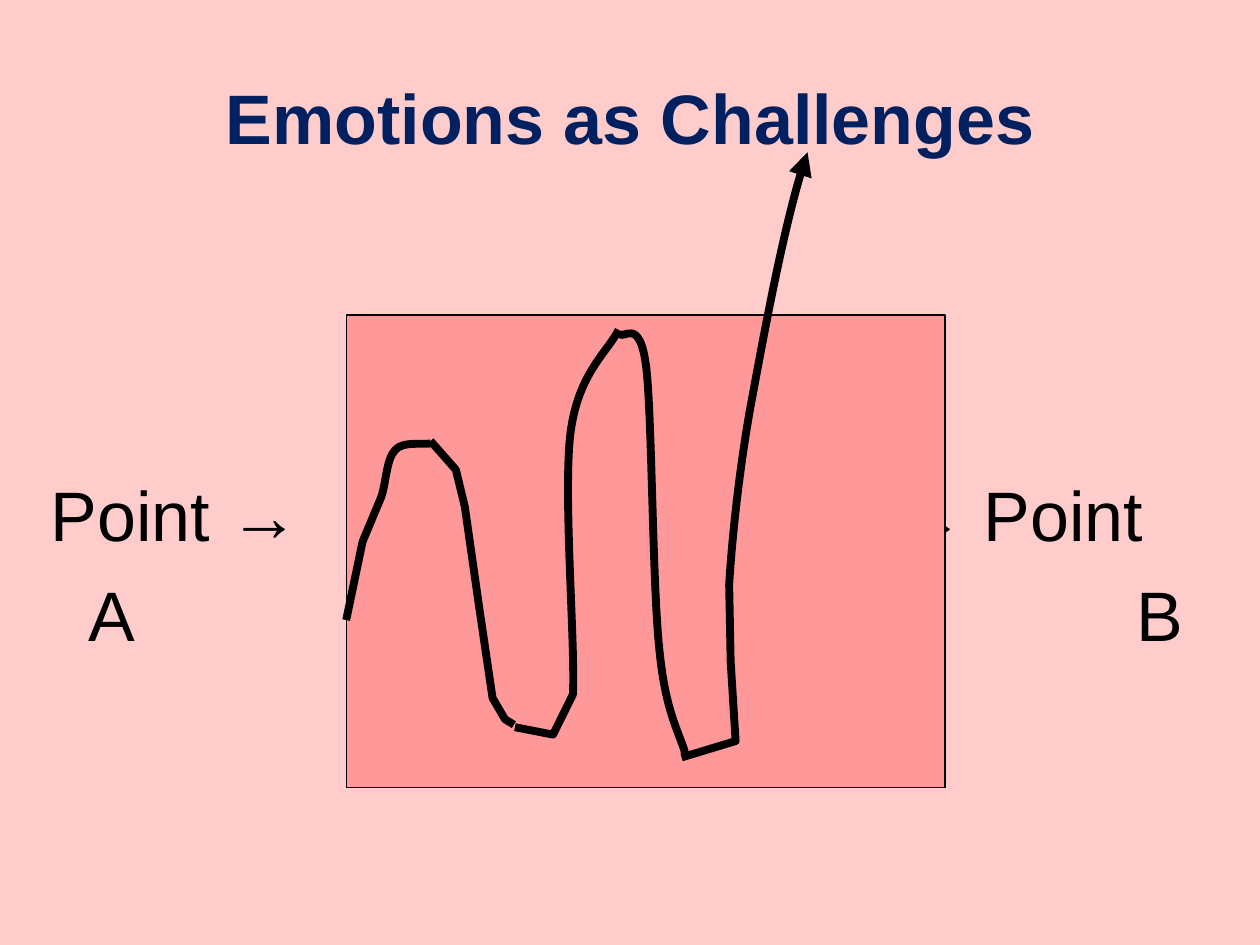
from lxml import etree
from pptx import Presentation
from pptx.dml.color import RGBColor
from pptx.enum.shapes import MSO_SHAPE
from pptx.enum.text import MSO_ANCHOR, PP_ALIGN
from pptx.oxml.ns import qn
from pptx.util import Cm, Pt

RECTANGLE = MSO_SHAPE.RECTANGLE
TOP, MIDDLE = MSO_ANCHOR.TOP, MSO_ANCHOR.MIDDLE
LEFT, CENTER = PP_ALIGN.LEFT, PP_ALIGN.CENTER
TITLE_ONLY = 5
COLORS = {"page": "FFCCCC", "panel": "FF9999", "title": "002060", "ink": "000000"}

# Each stroke is a start point, then segments: one point for a line, three for a curve.
STROKES = [
    [(0, 6.15), [(0.33, 4.57)], [(0.71, 3.66)],
     [(0.81, 3.35), (0.81, 2.9), (0.99, 2.72)],
     [(1.14, 2.54), (1.55, 2.62), (1.7, 2.59)]],
    [(1.7, 2.54), [(2.21, 3.12)], [(2.39, 3.86)], [(2.67, 5.82)],
     [(2.95, 7.72)], [(3.2, 8.15)], [(3.38, 8.26)]],
    [(3.4, 8.31), [(4.17, 8.46)], [(4.57, 7.65)],
     [(4.62, 6.63), (4.37, 3.61), (4.52, 2.39)],
     [(4.67, 1.17), (5.28, 0.74), (5.49, 0.3)]],
    [(5.51, 0.38), [(5.59, 0.51), (5.92, 0), (6.05, 1.07)],
     [(6.17, 2.13), (6.17, 5.49), (6.32, 6.81)],
     [(6.45, 8.1), (6.76, 8.48), (6.86, 8.94)]],
    [(6.76, 8.92), [(7.85, 8.59)], [(7.75, 6.98)], [(7.72, 5.44)],
     [(7.77, 4.6), (7.9, 3.3), (8.13, 1.96)],
     [(8.38, 0.61), (8.85, -2), (9.3, -3.28)]],
]


def color(name):
    """Return the named colour."""
    return RGBColor.from_string(COLORS[name])


def place(shape, box):
    """Move a shape to a box given in centimetres."""
    shape.left, shape.top, shape.width, shape.height = map(Cm, box)


def write(para, text, size=40, ink="ink", bold=False, align=LEFT, before=0, indent=0):
    """Fill a paragraph with formatted text."""
    props = para._p.get_or_add_pPr()
    props.set("marL", str(Cm(indent)))
    props.set("indent", "0")
    para.alignment = align
    para.space_before = Pt(before)
    span = para.add_run()
    span.text = text
    span.font.name = "Arial"
    span.font.size = Pt(size)
    span.font.bold = bold
    span.font.color.rgb = color(ink)


def add_title(page, box, text):
    """Place and format the title placeholder."""
    title = page.shapes.title
    place(title, box)
    title.text_frame.vertical_anchor = MIDDLE
    write(title.text_frame.paragraphs[0], text, ink="title", bold=True, align=CENTER)


def add_point(page, box, word, letter, indent):
    """Add a two-line point label with an indented letter."""
    frame = page.shapes.add_textbox(*map(Cm, box)).text_frame
    frame.word_wrap = True
    frame.vertical_anchor = TOP
    frame.margin_left = frame.margin_right = frame.margin_top = frame.margin_bottom = 0
    write(frame.paragraphs[0], word)
    write(frame.add_paragraph(), letter, before=9.4, indent=indent)


def add_stroke(page, origin, start, segments):
    """Draw an open thick stroke of lines and curves from an origin."""
    def locate(point):
        return tuple(Cm(base + step) for base, step in zip(origin, point))

    builder = page.shapes.build_freeform(*locate(start))
    points = [locate(point) for segment in segments for point in segment]
    builder.add_line_segments(points, close=False)
    stroke = builder.convert_to_shape()
    stroke.shadow.inherit = False
    stroke.fill.background()
    stroke.line.color.rgb = color("ink")
    stroke.line.width = Pt(4.5)
    lines = iter(list(stroke._element.iter(qn("a:lnTo"))))
    for segment in segments:
        group = [next(lines) for _ in segment]
        if len(group) == 3:
            curve = etree.Element(qn("a:cubicBezTo"))
            group[0].addprevious(curve)
            for line in group:
                curve.append(line[0])
                line.getparent().remove(line)
    return stroke


def add_journey(page, box):
    """Draw the panel and the winding path that leaves it."""
    panel = page.shapes.add_shape(RECTANGLE, *map(Cm, box))
    panel.shadow.inherit = False
    panel.fill.solid()
    panel.fill.fore_color.rgb = color("panel")
    panel.line.color.rgb = color("ink")
    panel.line.width = Pt(0.75)
    for start, *segments in STROKES:
        stroke = add_stroke(page, box[:2], start, segments)
    etree.SubElement(stroke.line._get_or_add_ln(), qn("a:tailEnd"), type="triangle")


def main():
    """Build and save the deck."""
    deck = Presentation()
    deck.slide_width, deck.slide_height = Cm(25.4), Cm(19.05)
    page = deck.slides.add_slide(deck.slide_layouts[TITLE_ONLY])
    page.background.fill.solid()
    page.background.fill.fore_color.rgb = color("page")
    add_title(page, (1.27, 0.76, 22.86, 3.18), "Emotions as Challenges")
    add_point(page, (1.02, 9.5, 5.8, 3.8), "Point →", "A", indent=0.76)
    add_point(page, (18.03, 9.5, 7, 3.8), "→ Point", "B", indent=4.88)
    add_journey(page, (6.98, 6.35, 12.07, 9.53))
    deck.save("out.pptx")


if __name__ == "__main__":
    main()
